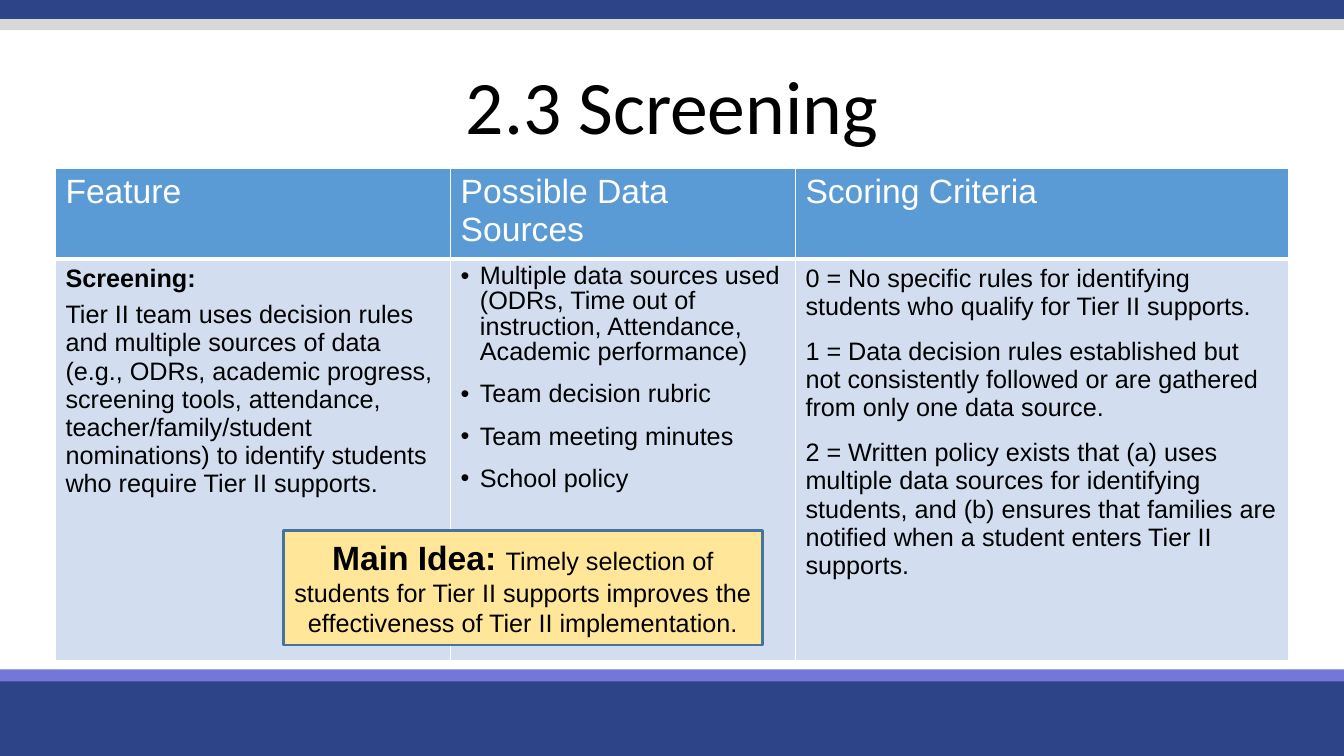
from lxml import etree
from pptx import Presentation
from pptx import util as u
from pptx.dml.color import RGBColor
from pptx.enum import shapes, text
from pptx.oxml import ns

COLORS = {
    "navy": "2E4488", "gray": "D8D8D8", "violet": "7476DA",
    "head": "5B9BD5", "body": "D2DEEF", "note": "FFE699",
    "edge": "43739E", "white": "FFFFFF", "black": "000000",
}
BANDS = [  # top, height, colour
    (-0.03, 0.22, "navy"), (0.19, 0.11, "gray"),
    (6.7, 0.8, "navy"), (6.64, 0.12, "violet"),
]
WIDTHS = [3.92, 3.42, 4.89]
HEIGHTS = [0.8, 3.98]
HEADS = ["Feature", "Possible Data Sources", "Scoring Criteria"]
FEATURE = (
    "Tier II team uses decision rules and multiple sources of data (e.g., ODRs, "
    "academic progress, screening tools, attendance, teacher/family/student "
    "nominations) to identify students who require Tier II supports."
)
SOURCES = [
    "Multiple data sources used (ODRs, Time out of instruction, Attendance, "
    "Academic performance)",
    "Team decision rubric",
    "Team meeting minutes",
    "School policy",
]
SCORES = [
    "0 = No specific rules for identifying students who qualify for Tier II supports.",
    "1 = Data decision rules established but not consistently followed or are "
    "gathered from only one data source.",
    "2 = Written policy exists that (a) uses multiple data sources for identifying "
    "students, and (b) ensures that families are notified when a student enters "
    "Tier II supports.",
]
IDEA = (
    "Timely selection of students for Tier II supports improves the "
    "effectiveness of Tier II implementation."
)


def rgb(name):
    return RGBColor.from_string(COLORS[name])


def sub(parent, tag, **attrs):
    return etree.SubElement(parent, ns.qn(tag), **attrs)


def add_run(para, words, size=18, color="black", bold=False, font="Arial"):
    run = para.add_run()
    run.text = words
    run.font.size = u.Pt(size)
    run.font.name = font
    run.font.bold = bold
    run.font.color.rgb = rgb(color)


def add_bullet(para):
    props = para._p.get_or_add_pPr()
    indent = u.Inches(0.19)
    props.set("marL", str(indent))
    props.set("indent", str(-indent))
    sub(sub(props, "a:buClr"), "a:srgbClr", val=COLORS["black"])
    sub(props, "a:buFont", typeface="Arial")
    sub(props, "a:buChar", char="•")


def write(frame, lines, after=0, last=0, space=None, align=None, bullet=False, **style):
    """Write each line as a paragraph; a line is a list of (words, style) runs or a string."""
    frame.word_wrap = True
    for i, line in enumerate(lines):
        para = frame.add_paragraph() if i else frame.paragraphs[0]
        para.alignment = align
        para.line_spacing = space
        para.space_after = u.Pt(after if i < len(lines) - 1 else last)
        if bullet:
            add_bullet(para)
        runs = [(line, {})] if isinstance(line, str) else line
        for words, extra in runs:
            add_run(para, words, **{**style, **extra})


def add_box(slide, left, top, width, height, fill, line=None):
    box = slide.shapes.add_shape(
        shapes.MSO_SHAPE.RECTANGLE,
        u.Inches(left), u.Inches(top), u.Inches(width), u.Inches(height))
    box.shadow.inherit = False
    box.fill.solid()
    box.fill.fore_color.rgb = rgb(fill)
    if line:
        box.line.color.rgb = rgb(line)
        box.line.width = u.Pt(2)
    else:
        box.line.fill.background()
    return box


def style_cell(cell, fill, top, bottom):
    props = cell._tc.get_or_add_tcPr()
    for side, width in (("L", 1), ("R", 1), ("T", top), ("B", bottom)):
        edge = sub(props, f"a:ln{side}", w=str(u.Pt(width)))
        sub(sub(edge, "a:solidFill"), "a:srgbClr", val=COLORS["white"])
    cell.fill.solid()
    cell.fill.fore_color.rgb = rgb(fill)


def add_grid(slide):
    grid = slide.shapes.add_table(
        2, 3, u.Inches(0.55), u.Inches(1.67),
        u.Inches(sum(WIDTHS)), u.Inches(sum(HEIGHTS))).table
    for col, width in zip(grid.columns, WIDTHS):
        col.width = u.Inches(width)
    for row, height in zip(grid.rows, HEIGHTS):
        row.height = u.Inches(height)

    for i, head in enumerate(HEADS):
        style_cell(grid.cell(0, i), "head", 1, 3)
        style_cell(grid.cell(1, i), "body", 3, 1)
        write(grid.cell(0, i).text_frame, [head], size=24, color="white")

    feature, sources, scores = (grid.cell(1, i).text_frame for i in range(3))
    write(feature, [[("Screening:", {"bold": True})], FEATURE], after=6, last=6)
    write(sources, SOURCES, after=12, space=0.9, bullet=True)
    write(scores, SCORES, after=12)


def add_title(slide, words):
    box = slide.shapes.add_textbox(
        u.Inches(1.42), u.Inches(0.66), u.Inches(10.49), u.Inches(0.87))
    box.text_frame.vertical_anchor = text.MSO_ANCHOR.MIDDLE
    write(box.text_frame, [words], space=0.9, align=text.PP_ALIGN.CENTER,
          size=54, font="Calibri")


def add_note(slide):
    note = add_box(slide, 2.81, 5.26, 4.75, 1.14, "note", "edge")
    note.text_frame.vertical_anchor = text.MSO_ANCHOR.MIDDLE
    write(note.text_frame,
          [[("Main Idea: ", {"size": 24, "bold": True}), (IDEA, {})]],
          align=text.PP_ALIGN.CENTER)


def main():
    deck = Presentation()
    deck.slide_width, deck.slide_height = u.Inches(13.33), u.Inches(7.5)
    slide = deck.slides.add_slide(deck.slide_layouts[6])

    # Bands at the top and the foot
    for top, height, fill in BANDS:
        add_box(slide, 0, top, 13.33, height, fill)

    # Title, table and callout
    add_title(slide, "2.3 Screening")
    add_grid(slide)
    add_note(slide)

    deck.save("out.pptx")


if __name__ == "__main__":
    main()
